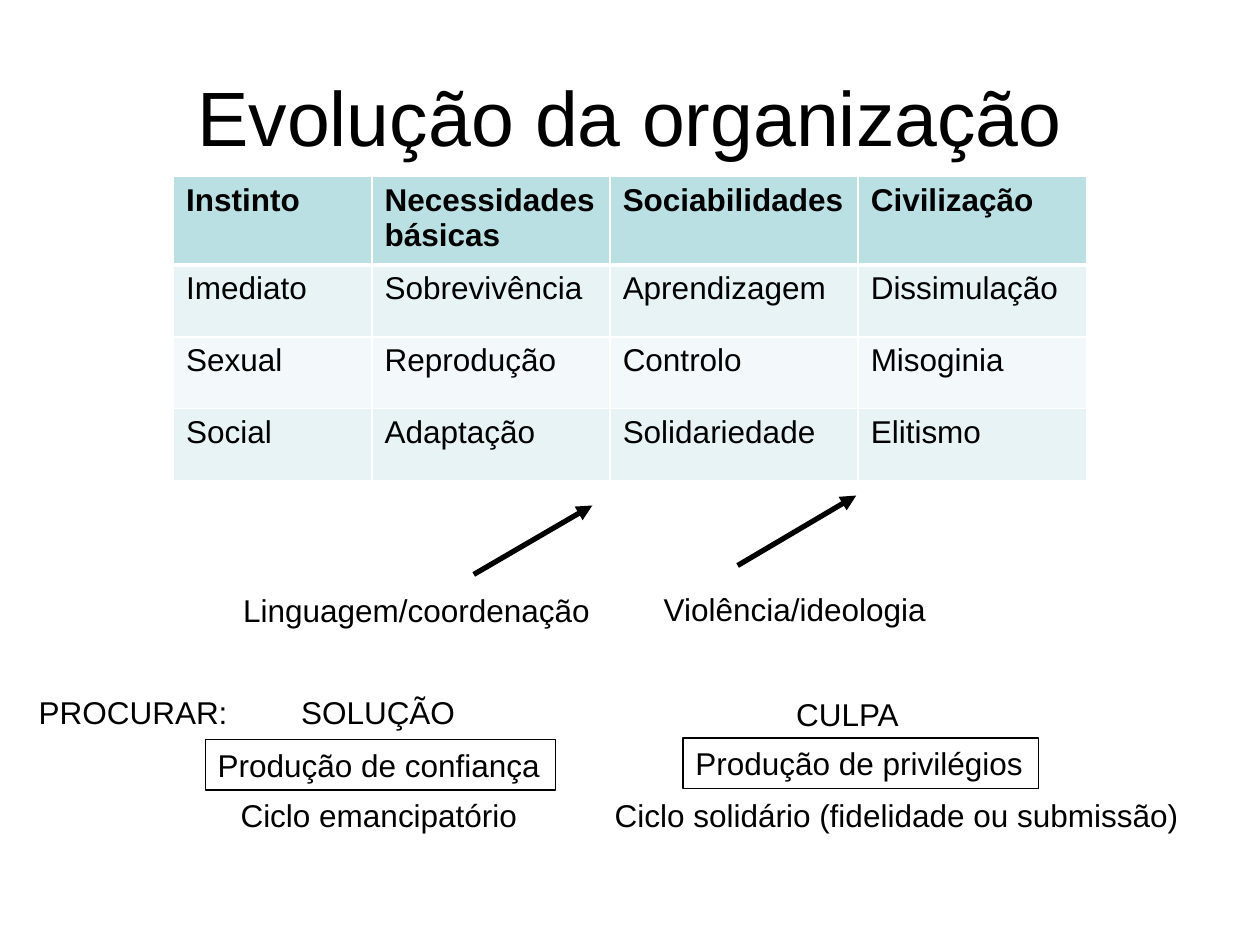
import pptx
import pptx.util
import pptx.dml.color
import pptx.enum.shapes
import pptx.enum.text
import pptx.oxml
import pptx.oxml.ns
import lxml.etree

Cm = pptx.util.Cm
Pt = pptx.util.Pt
COLORS = {
    "ink": "000000",
    "paper": "FFFFFF",
    "header": "BBE0E3",
    "band": "E7F3F4",
    "light band": "F3F9FA",
}


def rgb(name):
    return pptx.dml.color.RGBColor.from_string(COLORS[name])


def style(paragraph, size=18, bold=False):
    for run in paragraph.runs:
        run.font.name = "Arial"
        run.font.size = Pt(size)
        run.font.bold = bold
        run.font.color.rgb = rgb("ink")


prs = pptx.Presentation()
prs.slide_width, prs.slide_height = Cm(25.4), Cm(19.05)
slide = prs.slides.add_slide(prs.slide_layouts[6])

# Title
title = slide.shapes.add_textbox(Cm(1.27), Cm(0.74), Cm(22.86), Cm(3.18)).text_frame
title.word_wrap = True
title.vertical_anchor = pptx.enum.text.MSO_ANCHOR.MIDDLE
title.text = "Evolução da organização"
title.paragraphs[0].alignment = pptx.enum.text.PP_ALIGN.CENTER
style(title.paragraphs[0], size=44)

# Stages table
stages = [
    ["Instinto", "Necessidades básicas", "Sociabilidades", "Civilização"],
    ["Imediato", "Sobrevivência", "Aprendizagem", "Dissimulação"],
    ["Sexual", "Reprodução", "Controlo", "Misoginia"],
    ["Social", "Adaptação", "Solidariedade", "Elitismo"],
]
row_fills = ["header", "band", "light band", "band"]
column_widths = [4, 4.8, 5, 4.6]
row_heights = [1.65, 1.45, 1.45, 1.45]
table = slide.shapes.add_table(
    len(stages), len(column_widths), Cm(3.5), Cm(3.56),
    Cm(sum(column_widths)), Cm(sum(row_heights))).table
for column, width in zip(table.columns, column_widths):
    column.width = Cm(width)
for row, height in zip(table.rows, row_heights):
    row.height = Cm(height)

for r, words in enumerate(stages):
    for c, word in enumerate(words):
        cell = table.cell(r, c)
        cell.text = word
        style(cell.text_frame.paragraphs[0], bold=r == 0)
        # White borders, thicker between header and body
        borders = {"lnL": 1, "lnR": 1, "lnT": 3 if r == 1 else 1, "lnB": 3 if r == 0 else 1}
        cell_properties = cell._tc.get_or_add_tcPr()
        for side, points in borders.items():
            cell_properties.append(pptx.oxml.parse_xml(
                f'<a:{side} {pptx.oxml.ns.nsdecls("a")} w="{Pt(points)}"><a:solidFill>'
                f'<a:srgbClr val="{COLORS["paper"]}"/></a:solidFill></a:{side}>'))
        cell.fill.solid()
        cell.fill.fore_color.rgb = rgb(row_fills[r])

# Arrows from the drivers up to the table
for x1, y1, x2, y2 in [(9.55, 11.58, 11.94, 10.19), (14.87, 11.4, 17.26, 9.99)]:
    arrow = slide.shapes.add_connector(
        pptx.enum.shapes.MSO_CONNECTOR.STRAIGHT, Cm(x1), Cm(y1), Cm(x2), Cm(y2))
    arrow.line.color.rgb = rgb("ink")
    arrow.line.width = Pt(3)
    qn = pptx.oxml.ns.qn
    lxml.etree.SubElement(arrow.line._get_or_add_ln(), qn("a:tailEnd"), type="triangle")
    lxml.etree.SubElement(arrow._element.spPr, qn("a:effectLst"))

# Labels: text, left, top, width, framed
labels = [
    ("Linguagem/coordenação", 4.65, 11.79, 7.57, False),
    ("Violência/ideologia", 13.13, 11.76, 5.84, False),
    ("Produção de confiança", 4.14, 14.91, 7.06, True),
    ("Produção de privilégios", 13.77, 14.88, 7.16, True),
    ("Ciclo emancipatório", 4.6, 15.93, 6.15, False),
    ("Ciclo solidário (fidelidade ou submissão)", 12.14, 15.93, 11.99, False),
    ("CULPA", 15.8, 13.89, 2.59, False),
    ("SOLUÇÃO", 5.82, 13.84, 3.66, False),
    ("PROCURAR:", 0.53, 13.84, 4.37, False),
]
for text, left, top, width, framed in labels:
    label = slide.shapes.add_textbox(Cm(left), Cm(top), Cm(width), Cm(1.02))
    label.text_frame.word_wrap = False
    label.text_frame.auto_size = pptx.enum.text.MSO_AUTO_SIZE.SHAPE_TO_FIT_TEXT
    label.text_frame.text = text
    style(label.text_frame.paragraphs[0])
    if framed:
        label.line.color.rgb = rgb("ink")
        label.line.width = Pt(0.75)

prs.save("out.pptx")
